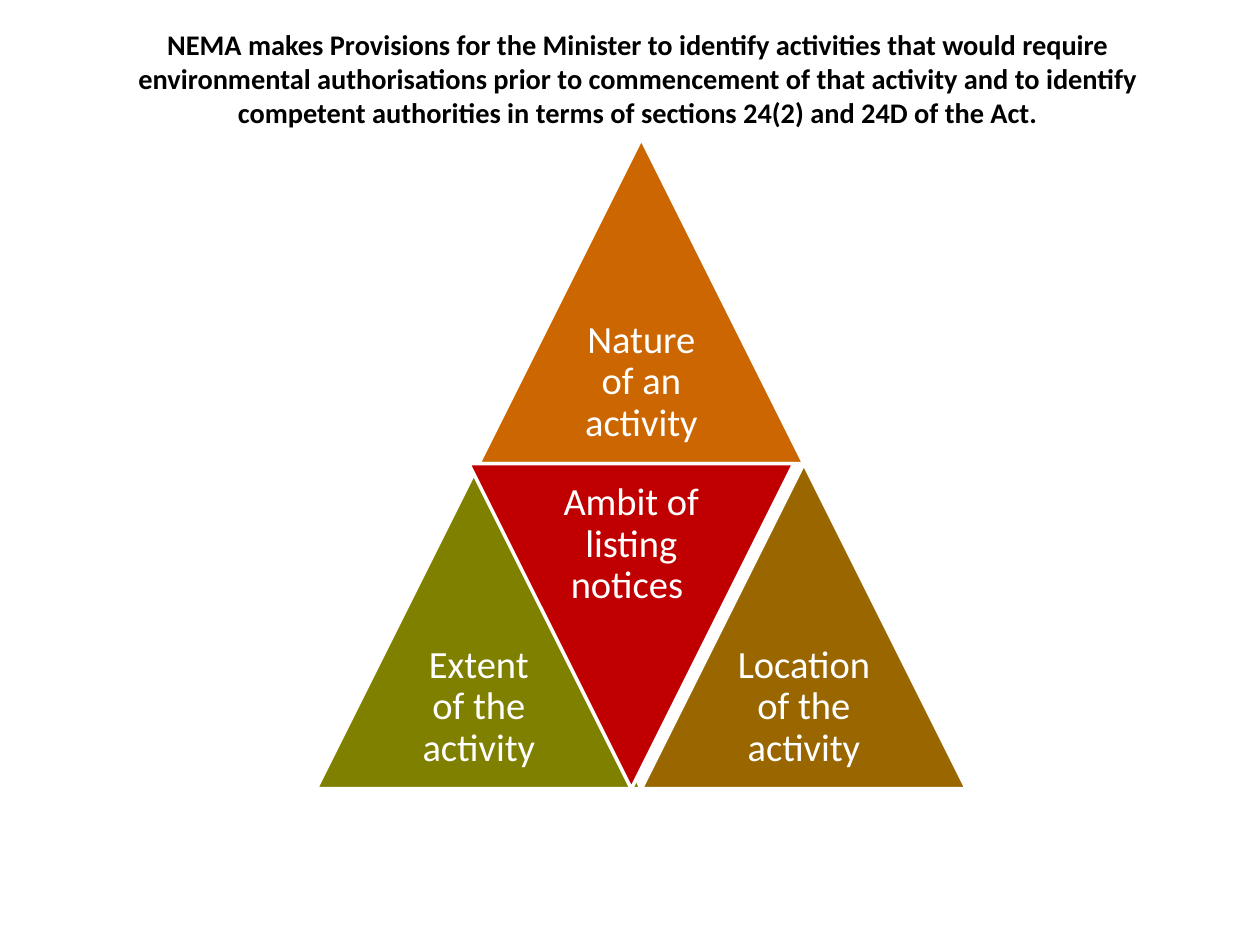
from pptx import Presentation
from pptx.dml.color import RGBColor
from pptx.enum.shapes import MSO_SHAPE
from pptx.enum.text import MSO_ANCHOR, PP_ALIGN
from pptx.util import Inches, Pt

TRIANGLE = MSO_SHAPE.ISOSCELES_TRIANGLE
MIDDLE = MSO_ANCHOR.MIDDLE
CENTER = PP_ALIGN.CENTER

BLACK = RGBColor(0x00, 0x00, 0x00)
WHITE = RGBColor(0xFF, 0xFF, 0xFF)
ORANGE = RGBColor(0xCC, 0x66, 0x00)
OLIVE = RGBColor(0x80, 0x80, 0x00)
RED = RGBColor(0xC0, 0x00, 0x00)
BROWN = RGBColor(0x99, 0x66, 0x00)

FONT = "Calibri"
SIDE = 2.58
TOP_ROW = 1.1
BOTTOM_ROW = TOP_ROW + SIDE

TITLE = (
    "NEMA makes Provisions for the Minister to identify activities that would "
    "require environmental authorisations prior to commencement of that activity "
    "and to identify competent authorities in terms of sections 24(2) and 24D of "
    "the Act."
)

# label, left, top, fill, points down
TRIANGLES = [
    ("Nature of an activity", 3.8, TOP_ROW, ORANGE, False),
    ("Extent of the activity", 2.51, BOTTOM_ROW, OLIVE, False),
    ("Ambit of listing notices ", 3.72, BOTTOM_ROW, RED, True),
    ("Location of the activity", 2.51 + SIDE, BOTTOM_ROW, BROWN, False),
]


def add_text(slide, text, left, top, width, height, size, color, bold=False):
    box = slide.shapes.add_textbox(
        Inches(left), Inches(top), Inches(width), Inches(height))
    tf = box.text_frame
    tf.text = text
    tf.word_wrap = True
    tf.vertical_anchor = MIDDLE
    p = tf.paragraphs[0]
    p.alignment = CENTER
    font = p.runs[0].font
    font.name = FONT
    font.size = Pt(size)
    font.bold = bold
    font.color.rgb = color
    return tf


def add_triangle(slide, label, left, top, fill, points_down):
    """Draw a triangle with its label in the half next to its base."""
    sp = slide.shapes.add_shape(
        TRIANGLE, Inches(left), Inches(top), Inches(SIDE), Inches(SIDE))
    sp.rotation = 180 if points_down else 0
    sp.shadow.inherit = False
    sp.fill.solid()
    sp.fill.fore_color.rgb = fill
    sp.line.color.rgb = WHITE
    sp.line.width = Pt(2)

    half = SIDE / 2
    label_top = top if points_down else top + half
    tf = add_text(slide, label, left + SIDE / 4, label_top, half, half, 22, WHITE)
    tf.margin_left = tf.margin_right = Inches(0.09)
    tf.margin_top = tf.margin_bottom = Inches(0.09)
    tf.paragraphs[0].line_spacing = 0.9


def main():
    prs = Presentation()
    prs.slide_width = Inches(10)
    prs.slide_height = Inches(7.5)
    slide = prs.slides.add_slide(prs.slide_layouts[6])
    add_text(slide, TITLE, 0.56, 0.27, 9, 0.7, 16.2, BLACK, bold=True)
    for triangle in TRIANGLES:
        add_triangle(slide, *triangle)
    prs.save("out.pptx")


if __name__ == "__main__":
    main()
